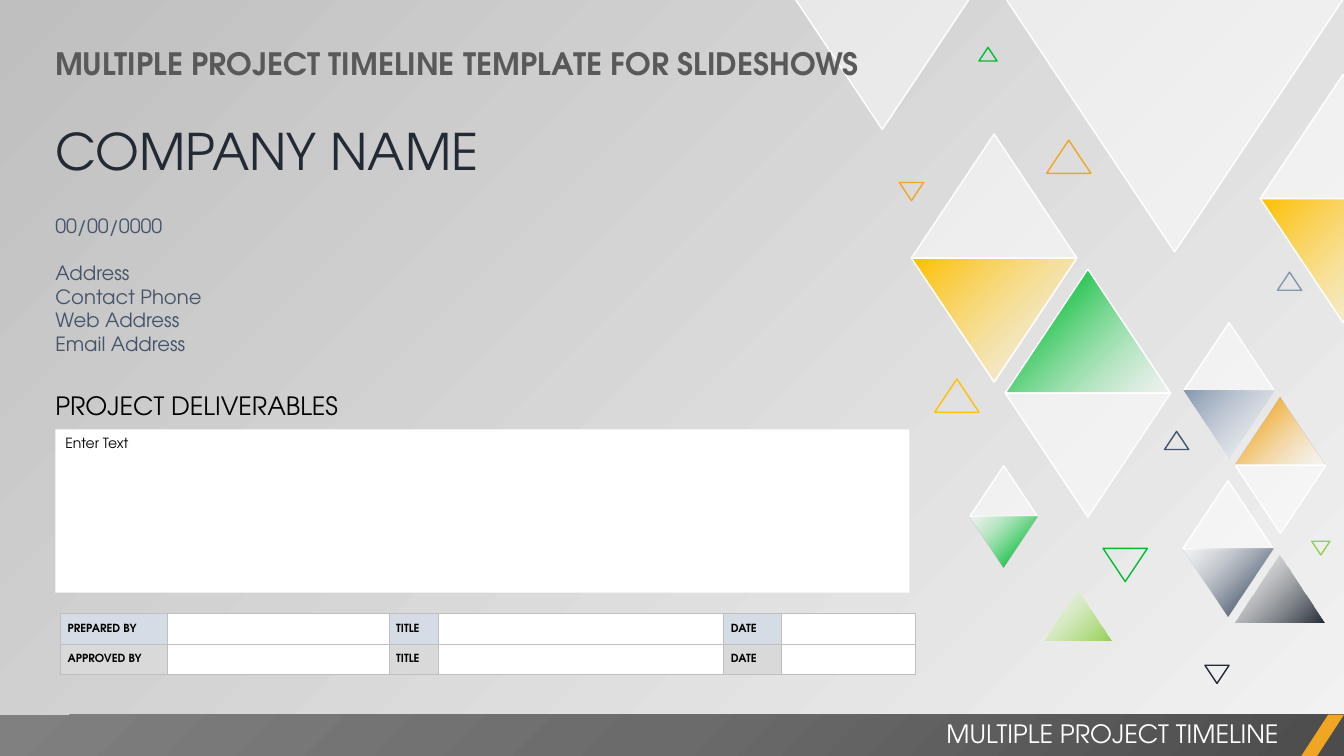
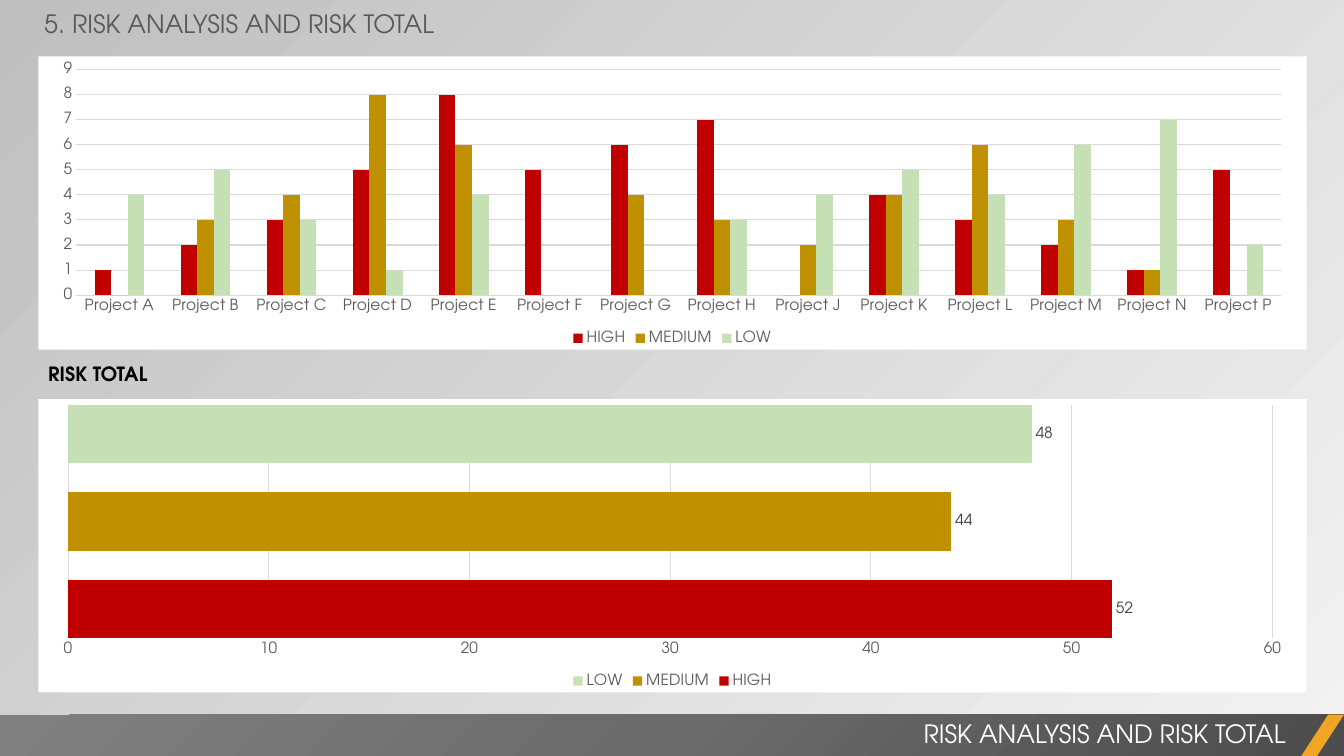
from lxml import etree
from pptx import Presentation
from pptx.chart.data import CategoryChartData
from pptx.dml.color import RGBColor
from pptx.enum.chart import XL_CHART_TYPE as CHART
from pptx.enum.chart import XL_LABEL_POSITION as LABEL
from pptx.enum.chart import XL_LEGEND_POSITION as LEGEND
from pptx.enum.chart import XL_TICK_MARK as TICK
from pptx.enum.shapes import MSO_SHAPE as SHAPE
from pptx.enum.text import MSO_ANCHOR as ANCHOR
from pptx.enum.text import MSO_AUTO_SIZE as AUTO
from pptx.enum.text import PP_ALIGN as ALIGN
from pptx.oxml import parse_xml
from pptx.oxml.ns import nsdecls, qn
from pptx.util import Inches, Pt

FONT = "TeX Gyre Adventor"
WHITE, BLACK, GRAY, RULE = "FFFFFF", "000000", "595959", "D9D9D9"
NAVY, SLATE, STEEL = "222A35", "44546A", "8497B0"
GOLD, ORANGE, GREEN, LIME = "FFC000", "F0A622", "00BD32", "92D050"
RISK = {"HIGH": "C00000", "MEDIUM": "BF9000", "LOW": "C5E0B4"}
LINEAR = '<a:lin ang="13500000" scaled="0"/>'
CORNER = ('<a:path path="circle">'
          '<a:fillToRect l="100000" t="100000"/></a:path>')


def rgb(color):
    return RGBColor.from_string(color)


def color_xml(color, alpha=100):
    return (f'<a:srgbClr val="{color}">'
            f'<a:alpha val="{alpha * 1000}"/></a:srgbClr>')


def swap_fill(fill, parent, xml):
    """Put the given fill element where the solid fill of parent stands."""
    fill.solid()
    parent.replace(parent.find(qn("a:solidFill")), parse_xml(xml))


def glass():
    return f'<a:solidFill {nsdecls("a")}>{color_xml(WHITE, 50)}</a:solidFill>'


def gradient(*stops, direction=LINEAR):
    """Each stop is (position, colour) or (position, colour, alpha)."""
    gs = "".join(f'<a:gs pos="{pos * 1000}">{color_xml(*color)}</a:gs>'
                 for pos, *color in stops)
    return (f'<a:gradFill {nsdecls("a")} rotWithShape="1">'
            f'<a:gsLst>{gs}</a:gsLst>{direction}</a:gradFill>')


def fade_out(color):
    return gradient((0, color), (100, WHITE, 50))


def fade_in(color):
    return gradient((0, WHITE, 50), (82, color))


def style_font(font, size, color, bold=False):
    font.name, font.size, font.bold = FONT, Pt(size), bold
    font.color.rgb = rgb(color)


def write(tf, text, size=14, color=BLACK, bold=False, align=ALIGN.LEFT,
          before=0, spacing=None):
    """Add one paragraph, filling the first one while the frame is empty."""
    p = tf.add_paragraph() if tf.text else tf.paragraphs[0]
    p.alignment, p.space_before = align, Pt(before)
    if spacing:
        p.line_spacing = spacing
    r = p.add_run()
    r.text = text
    style_font(r.font, size, color, bold)


def cell_border(cell, color):
    tcPr = cell._tc.get_or_add_tcPr()
    for i, side in enumerate(("lnL", "lnR", "lnT", "lnB")):
        tcPr.insert(i, parse_xml(
            f'<a:{side} {nsdecls("a")} w="12700"><a:solidFill>'
            f'{color_xml(color)}</a:solidFill></a:{side}>'))


class Deck:
    def __init__(self):
        self.prs = Presentation()
        self.prs.slide_width = Inches(13.33)
        self.prs.slide_height = Inches(7.5)
        self.s = None

    def new_slide(self):
        self.s = self.prs.slides.add_slide(self.prs.slide_layouts[6])
        fill = self.s.background.fill
        fill.solid()
        swap_fill(fill, self.s.element.xpath(".//p:bgPr")[0],
                  gradient((0, "F2F2F2", 40), (100, "BFBFBF")))

    def shape(self, kind, x, y, w, h, fill=None, line=None):
        """Fill is a hex colour, fill XML or None."""
        sp = self.s.shapes.add_shape(
            kind, Inches(x), Inches(y), Inches(w), Inches(h))
        sp.shadow.inherit = False
        if fill is None:
            sp.fill.background()
        elif fill.startswith("<"):
            swap_fill(sp.fill, sp.element.spPr, fill)
        else:
            sp.fill.solid()
            sp.fill.fore_color.rgb = rgb(fill)
        if line:
            sp.line.color.rgb = rgb(line)
            sp.line.width = Pt(1)
        else:
            sp.line.fill.background()
        return sp

    def triangle(self, x, y, w, down=False, fill=None, line=None):
        sp = self.shape(SHAPE.ISOSCELES_TRIANGLE, x, y, w, 0.75 * w,
                        fill, line)
        sp.rotation = 180 if down else 0

    def diamond(self, x, y, w, top, bottom):
        """Two triangles base to base; glass and large ones get an outline."""
        for down, fill in enumerate((top, bottom)):
            outlined = w > 1 or fill == glass()
            self.triangle(x, y + down * 0.75 * w, w, bool(down), fill,
                          WHITE if outlined else None)

    def textbox(self, x, y, w, h, text=None, wrap=True, **fmt):
        tb = self.s.shapes.add_textbox(
            Inches(x), Inches(y), Inches(w), Inches(h))
        tf = tb.text_frame
        tf.word_wrap, tf.auto_size = wrap, AUTO.SHAPE_TO_FIT_TEXT
        if text:
            write(tf, text, **fmt)
        return tf

    def footer(self, text):
        self.shape(SHAPE.RECTANGLE, 0, 7.09, 13.33, 0.41, gradient(
            (0, "4C4C4C"), (50, "6B6B6B"), (100, "808080"),
            direction=CORNER))
        slash = self.shape(SHAPE.PARALLELOGRAM, 12.9, 7.09, 0.43, 0.42, ORANGE)
        slash.adjustments[0] = 0.65
        self.textbox(5.25, 7.08, 7.6, 0.4, text, size=18, color=WHITE,
                     align=ALIGN.RIGHT)

    def sign_off_table(self, x, y, widths, row_h, rows):
        """Rows are (label fill, labels); each label is followed by a blank."""
        t = self.s.shapes.add_table(
            len(rows), len(widths), Inches(x), Inches(y),
            Inches(sum(widths)), Inches(row_h * len(rows))).table
        t.first_row = t.horz_banding = False
        for col, w in zip(t.columns, widths):
            col.width = Inches(w)
        for i, (label_fill, labels) in enumerate(rows):
            t.rows[i].height = Inches(row_h)
            for j in range(len(widths)):
                cell = t.cell(i, j)
                cell.margin_left = cell.margin_right = Inches(0.07)
                cell.margin_top = cell.margin_bottom = 0
                cell.vertical_anchor = ANCHOR.MIDDLE
                is_label = j % 2 == 0
                cell.fill.solid()
                cell.fill.fore_color.rgb = rgb(
                    label_fill if is_label else WHITE)
                cell_border(cell, "BFBFBF")
                if is_label:
                    write(cell.text_frame, labels[j // 2], size=8, bold=True,
                          spacing=1.07)
                else:
                    etree.SubElement(cell.text_frame.paragraphs[0]._p,
                                     qn("a:endParaRPr"), sz="800")

    def risk_chart(self, kind, y, cats, values, gap, overlap=0):
        """Values maps each risk level to its numbers."""
        data = CategoryChartData(number_format="0")
        data.categories = cats
        for level, nums in values.items():
            data.add_series(level, nums)
        chart = self.s.shapes.add_chart(
            kind, Inches(0.38), Inches(y), Inches(12.58), Inches(2.91),
            data).chart
        chart.has_title = False
        style_font(chart.font, 11, BLACK)
        chart.element.find(qn("c:chart")).addnext(parse_xml(
            f'<c:spPr {nsdecls("c", "a")}><a:solidFill>{color_xml(WHITE)}'
            '</a:solidFill><a:ln><a:noFill/></a:ln></c:spPr>'))
        chart.has_legend = True
        chart.legend.position = LEGEND.BOTTOM
        chart.legend.include_in_layout = False
        style_font(chart.legend.font, 11, GRAY)
        cat_axis, val_axis = chart.category_axis, chart.value_axis
        for axis in (cat_axis, val_axis):
            axis.major_tick_mark = axis.minor_tick_mark = TICK.NONE
            style_font(axis.tick_labels.font, 11, GRAY)
        val_axis.minimum_scale = 0
        val_axis.format.line.fill.background()
        for line in (cat_axis.format.line, val_axis.major_gridlines.format.line):
            line.color.rgb = rgb(RULE)
            line.width = Pt(0.75)
        plot = chart.plots[0]
        plot.vary_by_categories = False
        plot.gap_width, plot.overlap = gap, overlap
        for series in plot.series:
            series.format.fill.solid()
            series.format.fill.fore_color.rgb = rgb(RISK[series.name])
        return chart


def cover(deck):
    deck.new_slide()
    for d in (
        (9.04, 1.33, 1.64, glass(), fade_out(GOLD)),
        (9.97, 2.67, 1.64, fade_in(GREEN), glass()),
        (12.5, 0.74, 1.64, glass(), fade_out(GOLD)),
        (11.73, 4.77, 0.9, glass(), fade_in(SLATE)),
        (11.74, 3.2, 0.9, glass(), fade_out(STEEL)),
        (12.25, 3.94, 0.9, fade_in(ORANGE), glass()),
        (9.62, 4.62, 0.67, glass(), fade_in(GREEN)),
    ):
        deck.diamond(*d)
    for x, w in ((9.97, 3.36), (7.88, 1.74)):
        deck.triangle(x, -0.02, w, True, glass(), WHITE)
    deck.triangle(12.24, 5.5, 0.9, fill=fade_out(NAVY))
    deck.triangle(10.35, 5.85, 0.67, fill=fade_out(LIME))
    for x, y, w, down, color in (
        (10.94, 5.44, 0.44, True, GREEN),
        (9.27, 3.76, 0.44, False, GOLD),
        (10.38, 1.39, 0.44, False, ORANGE),
        (11.55, 4.28, 0.24, False, SLATE),
        (11.95, 6.6, 0.24, True, NAVY),
        (8.92, 1.81, 0.24, True, ORANGE),
        (12.67, 2.7, 0.24, False, STEEL),
        (9.71, 0.47, 0.18, False, GREEN),
        (13.01, 5.37, 0.18, True, LIME),
    ):
        deck.triangle(x, y, w, down, line=color)

    tf = deck.textbox(0.45, 1.14, 8.9, 2.46, "COMPANY NAME", size=36,
                      color=NAVY)
    for text, before in (("00/00/0000", 24), ("Address", 17),
                         ("Contact Phone", 0), ("Web Address", 0),
                         ("Email Address", 0)):
        write(tf, text, color=SLATE, before=before)
    deck.sign_off_table(
        0.6, 6.09, (1.06, 2.2, 0.49, 2.83, 0.57, 1.33), 0.3,
        (("D6DCE5", ("PREPARED BY", "TITLE", "DATE")),
         (RULE, ("APPROVED BY", "TITLE", "DATE"))))
    deck.textbox(0.45, 0.39, 8.37, 0.47,
                 "MULTIPLE PROJECT TIMELINE TEMPLATE FOR SLIDESHOWS",
                 size=22, color=GRAY, bold=True)
    deck.textbox(0.45, 3.82, 3.05, 0.4, "PROJECT DELIVERABLES", size=18)
    box = deck.shape(SHAPE.RECTANGLE, 0.55, 4.26, 8.47, 1.62, WHITE)
    box.text_frame.vertical_anchor = ANCHOR.TOP
    write(box.text_frame, "Enter Text", size=10)
    deck.footer("MULTIPLE PROJECT TIMELINE ")


def risk_analysis(deck):
    deck.new_slide()
    levels = {
        "HIGH": (1, 2, 3, 5, 8, 5, 6, 7, 0, 4, 3, 2, 1, 5),
        "MEDIUM": (0, 3, 4, 8, 6, 0, 4, 3, 2, 4, 6, 3, 1, 0),
        "LOW": (4, 5, 3, 1, 4, 0, 0, 3, 4, 5, 4, 6, 7, 2),
    }
    deck.risk_chart(CHART.COLUMN_CLUSTERED, 0.56,
                    [f"Project {c}" for c in "ABCDEFGHJKLMNP"], levels, 219)
    totals = {level: (sum(nums),) for level, nums in levels.items()}
    chart = deck.risk_chart(CHART.BAR_CLUSTERED, 3.96, ["1"], totals, 0, -50)
    chart.category_axis.visible = False
    for series in chart.plots[0].series:
        labels = series.data_labels
        labels.show_value = True
        labels.position = LABEL.OUTSIDE_END
        style_font(labels.font, 11, "404040")
    deck.textbox(0.38, 3.54, 1.21, 0.34, "RISK TOTAL", wrap=False, bold=True)
    deck.textbox(0.34, 0.03, 4.17, 0.4, "5. RISK ANALYSIS AND RISK TOTAL",
                 wrap=False, size=18, color=GRAY)
    deck.footer("RISK ANALYSIS AND RISK TOTAL")


def main():
    deck = Deck()
    cover(deck)
    risk_analysis(deck)
    deck.prs.save("out.pptx")


if __name__ == "__main__":
    main()
